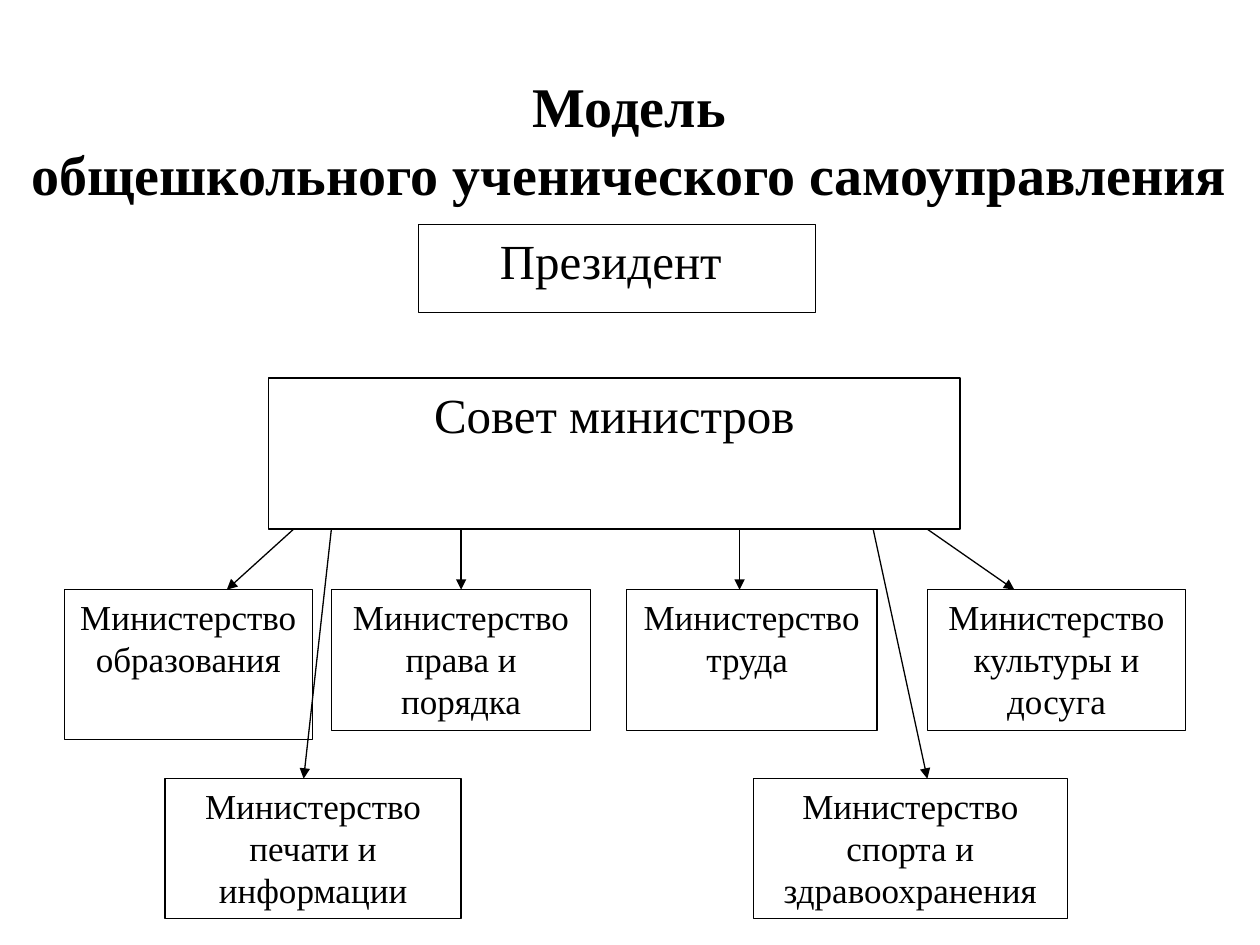
from dataclasses import dataclass

from lxml.etree import SubElement
from pptx import Presentation
from pptx.dml.color import RGBColor
from pptx.enum.shapes import MSO_CONNECTOR as Connector, MSO_SHAPE as Shape
from pptx.enum.text import MSO_ANCHOR as Anchor, MSO_AUTO_SIZE as AutoSize, PP_ALIGN as Align
from pptx.oxml.ns import qn
from pptx.util import Inches, Pt


@dataclass(frozen=True)
class Theme:
    font: str = "Times New Roman"
    ink: RGBColor = RGBColor(0, 0, 0)
    paper: RGBColor = RGBColor(255, 255, 255)
    title: int = 32
    leader: int = 28
    ministry: int = 20
    gap: int = 10
    line: float = 0.75


THEME = Theme()

TITLE = "Модель \nобщешкольного ученического самоуправления "
TITLE_AREA = (0.1, 0.52, 9.9, 1.78)

# text, left, top, width, height
LEADERS = [
    ("Президент ", 3.32, 1.78, 3.15, 0.7),
    ("Совет министров", 2.13, 3, 5.49, 1.2),
]
COUNCIL_BOTTOM = 4.2
UPPER_ROW, LOWER_ROW = 4.68, 6.18

# text, left, top, width, height, arrow start x, arrow end x
MINISTRIES = [
    ("Министерство образования", 0.51, UPPER_ROW, 1.97, 1.19, 2.33, 1.8),
    ("Министерство права и порядка", 2.63, UPPER_ROW, 2.06, 1.12, 3.66, 3.66),
    ("Министерство труда ", 4.97, UPPER_ROW, 1.99, 1.12, 5.87, 5.87),
    ("Министерство культуры и досуга", 7.36, UPPER_ROW, 2.05, 1.12, 7.36, 8.05),
    ("Министерство печати и информации", 1.31, LOWER_ROW, 2.35, 1.11, 2.63, 2.41),
    ("Министерство спорта и здравоохранения", 5.98, LOWER_ROW, 2.49, 1.11, 6.93, 7.36),
]


def write(frame, text, size, bold=False, space_after=0):
    frame.text = text
    frame.vertical_anchor = Anchor.TOP
    for para in frame.paragraphs:
        para.alignment = Align.CENTER
        para.space_after = Pt(space_after)
        for span in para.runs:
            span.font.name = THEME.font
            span.font.size = Pt(size)
            span.font.bold = bold
            span.font.color.rgb = THEME.ink


def add_title(page):
    title = page.shapes.title
    title.left, title.top, title.width, title.height = map(Inches, TITLE_AREA)
    write(title.text_frame, TITLE, THEME.title, bold=True)
    title.text_frame.word_wrap = False
    title.text_frame.auto_size = AutoSize.NONE


def add_box(page, text, area, size):
    box = page.shapes.add_shape(Shape.RECTANGLE, *map(Inches, area))
    box.shadow.inherit = False
    box.fill.solid()
    box.fill.fore_color.rgb = THEME.paper
    box.line.color.rgb = THEME.ink
    box.line.width = Pt(THEME.line)
    box.text_frame.word_wrap = True
    write(box.text_frame, text, size, space_after=THEME.gap)


def add_arrow(page, start, end):
    arrow = page.shapes.add_connector(Connector.STRAIGHT, *map(Inches, start + end))
    arrow.line.color.rgb = THEME.ink
    arrow.line.width = Pt(THEME.line)
    SubElement(arrow.line._get_or_add_ln(), qn("a:tailEnd"), type="triangle")
    SubElement(arrow._element.spPr, qn("a:effectLst"))


def main():
    deck = Presentation()
    deck.slide_width, deck.slide_height = Inches(10), Inches(7.5)
    page = deck.slides.add_slide(deck.slide_layouts[5])
    add_title(page)
    for text, *area in LEADERS:
        add_box(page, text, area, THEME.leader)
    for text, *area, _, _ in MINISTRIES:
        add_box(page, text, area, THEME.ministry)
    for _, _, top, _, _, start_x, end_x in MINISTRIES:
        add_arrow(page, (start_x, COUNCIL_BOTTOM), (end_x, top))
    deck.save("out.pptx")


if __name__ == "__main__":
    main()
